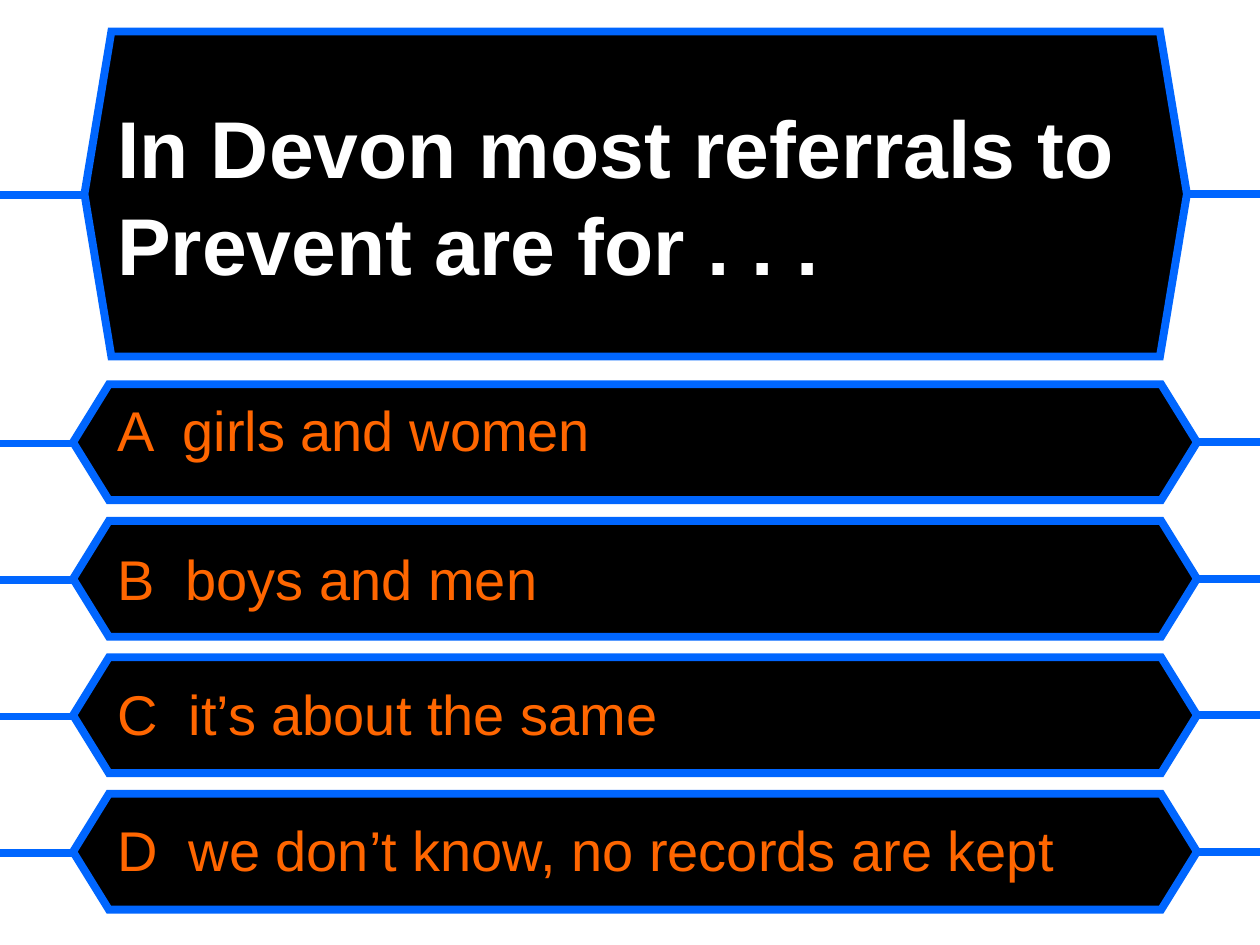
from dataclasses import dataclass

from lxml import etree
from pptx import Presentation
from pptx.dml.color import RGBColor
from pptx.enum import shapes, text
from pptx.oxml import ns
from pptx.util import Inches, Pt


@dataclass(frozen=True)
class Theme:
    panel: str = "000000"
    edge: str = "0066FF"
    ask: str = "FFFFFF"
    reply: str = "FF6600"
    font: str = "Arial"
    edge_size: float = 4.5
    ask_size: int = 46
    reply_size: int = 32


THEME = Theme()
WIDTH, HEIGHT = 10, 7.5
ASK = "In Devon most referrals to Prevent are for . . ."
# Each answer with the space before it in points
REPLIES = [
    ("A  girls and women", 0),
    ("B  boys and men", 46.5),
    ("C  it’s about the same", 39),
    ("D  we don’t know, no records are kept", 39),
]


def sub(parent, tag, **attrs):
    return etree.SubElement(parent, ns.qn(tag), attrs)


def edge(line):
    line.color.rgb = RGBColor.from_string(THEME.edge)
    line.width = Pt(THEME.edge_size)


def write(para, words, *, size, color, bold=False, before=0, indent=0):
    props = para._p.get_or_add_pPr()
    props.set("marL", str(Inches(indent)))
    props.set("indent", str(-Inches(indent)))
    sub(props, "a:buNone")
    para.alignment = text.PP_ALIGN.LEFT
    para.space_before = Pt(before)
    run = para.add_run()
    run.text = words
    font = run.font
    font.name, font.size, font.bold = THEME.font, Pt(size), bold
    font.color.rgb = RGBColor.from_string(color)


def place(holder, box, anchor, top=0.05):
    """Move a placeholder to its box, in front of the panels."""
    holder.left, holder.top, holder.width, holder.height = map(Inches, box)
    tree = holder._element.getparent()
    tree.append(holder._element)
    frame = holder.text_frame
    frame.word_wrap = True
    frame.auto_size = text.MSO_AUTO_SIZE.NONE
    frame.vertical_anchor = anchor
    frame.margin_left = frame.margin_right = Inches(0.1)
    frame.margin_top, frame.margin_bottom = Inches(top), Inches(0.05)
    return frame


def wire(slide, start, end, y):
    line = slide.shapes.add_connector(
        shapes.MSO_CONNECTOR.STRAIGHT, Inches(start), Inches(y), Inches(end), Inches(y))
    edge(line.line)
    sub(line._element.spPr, "a:effectLst")


def panel(slide, box, slant):
    """Draw a hexagon with a wire from each side to the slide edge."""
    left, top, width, height = box
    shape = slide.shapes.add_shape(shapes.MSO_SHAPE.HEXAGON, *map(Inches, box))
    shape.adjustments[0] = slant
    shape.fill.solid()
    shape.fill.fore_color.rgb = RGBColor.from_string(THEME.panel)
    edge(shape.line)
    sub(shape.line._get_or_add_ln(), "a:miter", lim="800000")
    shape.shadow.inherit = False
    mid = top + height / 2
    wire(slide, 0, left, mid + 0.01)
    wire(slide, left + width, WIDTH, mid)


def question(slide, box):
    left, top, width, height = box
    panel(slide, box, 0.083)
    inner = (left + 0.16, top + 0.17, width - 0.33, height - 0.33)
    frame = place(slide.shapes.title, inner, text.MSO_ANCHOR.MIDDLE)
    write(frame.paragraphs[0], ASK, size=THEME.ask_size, color=THEME.ask, bold=True)


def answers(slide, box):
    left, top, width, height = box
    tall = 0.92
    pitch = (height - tall) / (len(REPLIES) - 1)
    for row in range(len(REPLIES)):
        panel(slide, (left, top + row * pitch, width, tall), 0.309)
    inner = (left + 0.25, top - 0.01, width + 0.1, height + 0.16)
    frame = place(slide.placeholders[1], inner, text.MSO_ANCHOR.TOP, top=0.1)
    for row, (words, before) in enumerate(REPLIES):
        para = frame.add_paragraph() if row else frame.paragraphs[0]
        write(para, words, size=THEME.reply_size, color=THEME.reply,
              before=before, indent=0.38)


def main():
    deck = Presentation()
    deck.slide_width, deck.slide_height = Inches(WIDTH), Inches(HEIGHT)
    slide = deck.slides.add_slide(deck.slide_layouts[1])
    question(slide, (0.67, 0.25, 8.75, 2.58))
    answers(slide, (0.58, 3.05, 8.92, 4.17))
    deck.save("out.pptx")


if __name__ == "__main__":
    main()
